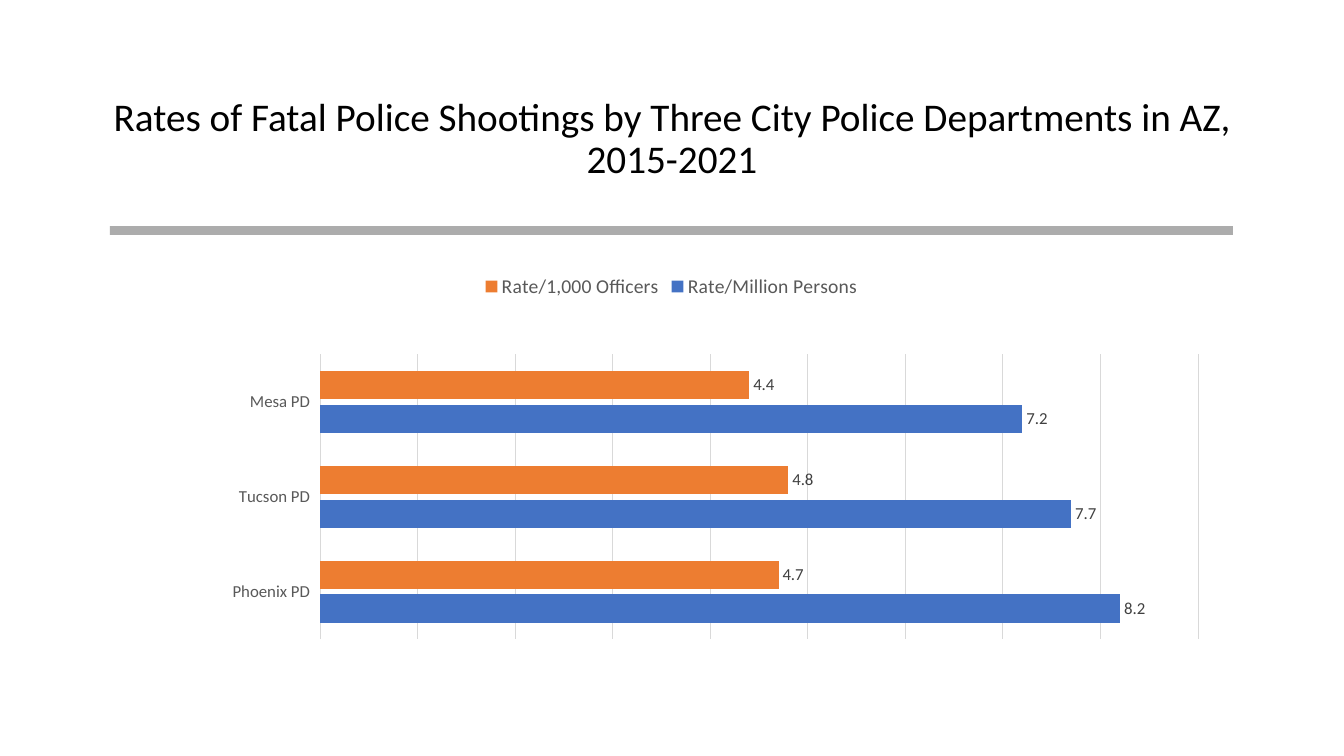
"""Build the slide on rates of fatal police shootings in three Arizona cities."""
from lxml import etree
from pptx import Presentation
from pptx.chart.data import CategoryChartData
from pptx.dml.color import RGBColor
from pptx.enum.chart import XL_CHART_TYPE, XL_LABEL_POSITION, XL_LEGEND_POSITION, XL_TICK_LABEL_POSITION, XL_TICK_MARK
from pptx.enum.shapes import MSO_SHAPE
from pptx.enum.text import MSO_ANCHOR, PP_ALIGN
from pptx.oxml import parse_xml
from pptx.oxml.ns import qn
from pptx.util import Pt

BAR_CLUSTERED = XL_CHART_TYPE.BAR_CLUSTERED
OUTSIDE_END = XL_LABEL_POSITION.OUTSIDE_END
LEGEND_TOP = XL_LEGEND_POSITION.TOP
LABELS_LOW = XL_TICK_LABEL_POSITION.LOW
NO_TICK = XL_TICK_MARK.NONE
RECTANGLE = MSO_SHAPE.RECTANGLE
MIDDLE = MSO_ANCHOR.MIDDLE
CENTER = PP_ALIGN.CENTER

PX = 914400 / 100.8
CHART_NS = "http://schemas.openxmlformats.org/drawingml/2006/chart"
PLOT_AREA = {"x": 0.187, "y": 0.229, "w": 0.782, "h": 0.714}
SERIES = [
    ("Rate/Million Persons", (8.2, 7.7, 7.2), "4472C4"),
    ("Rate/1,000 Officers", (4.7, 4.8, 4.4), "ED7D31"),
]


def px(*lengths):
    return [round(length * PX) for length in lengths]


def style(font, size, color):
    for name, value in {"name": "Calibri", "size": Pt(size), "bold": False}.items():
        setattr(font, name, value)
    font.color.rgb = RGBColor.from_string(color)


deck = Presentation()
deck.slide_width, deck.slide_height = px(1344, 756)
page = deck.slides.add_slide(deck.slide_layouts[6])

title = page.shapes.add_textbox(*px(96, 67, 1152, 146)).text_frame
title.word_wrap = True
title.vertical_anchor = MIDDLE
para = title.paragraphs[0]
para.alignment = CENTER
para.line_spacing = 0.9
span = para.add_run()
span.text = "Rates of Fatal Police Shootings by Three City Police Departments in AZ, 2015-2021"
style(span.font, 28, "000000")

divider = page.shapes.add_shape(RECTANGLE, *px(110, 226, 1123, 9))
divider.shadow.inherit = False
divider.fill.solid()
divider.fill.fore_color.rgb = RGBColor.from_string("808080")
divider.line.fill.background()
divider_color = divider.fill._xPr.find(".//" + qn("a:srgbClr"))
etree.SubElement(divider_color, qn("a:alpha"), val="65000")

data = CategoryChartData(number_format="0.0")
data.categories = ["Phoenix PD", "Tucson PD", "Mesa PD"]
for name, rates, color in SERIES:
    data.add_series(name, rates)
chart = page.shapes.add_chart(BAR_CLUSTERED, *px(110, 263, 1123, 399), data).chart
style(chart.font, 10, "000000")
chart.has_title = False
chart.has_legend = True
chart.legend.position = LEGEND_TOP
chart.legend.include_in_layout = False
style(chart.legend.font, 14, "595959")

plot = chart.plots[0]
for name, value in {"gap_width": 116, "overlap": -20, "vary_by_categories": False}.items():
    setattr(plot, name, value)
for series, (name, rates, color) in zip(plot.series, SERIES):
    series.format.fill.solid()
    series.format.fill.fore_color.rgb = RGBColor.from_string(color)
    labels = series.data_labels
    labels.show_value = True
    labels.position = OUTSIDE_END
    style(labels.font, 12, "404040")

city_axis = chart.category_axis
city_axis.major_tick_mark = NO_TICK
city_axis.tick_label_position = LABELS_LOW
style(city_axis.tick_labels.font, 12, "595959")
rate_axis = chart.value_axis
rate_axis_values = {"minimum_scale": 0, "maximum_scale": 9, "major_unit": 1, "has_major_gridlines": True, "visible": False}
for name, value in rate_axis_values.items():
    setattr(rate_axis, name, value)
for line in (city_axis.format.line, rate_axis.major_gridlines.format.line):
    line.width = Pt(0.75)
    line.color.rgb = RGBColor.from_string("D9D9D9")

plot_area = chart._chartSpace.find(".//" + qn("c:plotArea"))
for layout in plot_area.findall(qn("c:layout")):
    plot_area.remove(layout)
modes = '<c:layoutTarget val="inner"/><c:xMode val="edge"/><c:yMode val="edge"/>'
sizes = "".join(f'<c:{side} val="{value}"/>' for side, value in PLOT_AREA.items())
plot_area.insert(0, parse_xml(
    f'<c:layout xmlns:c="{CHART_NS}"><c:manualLayout>{modes}{sizes}</c:manualLayout></c:layout>'))

deck.save("out.pptx")
